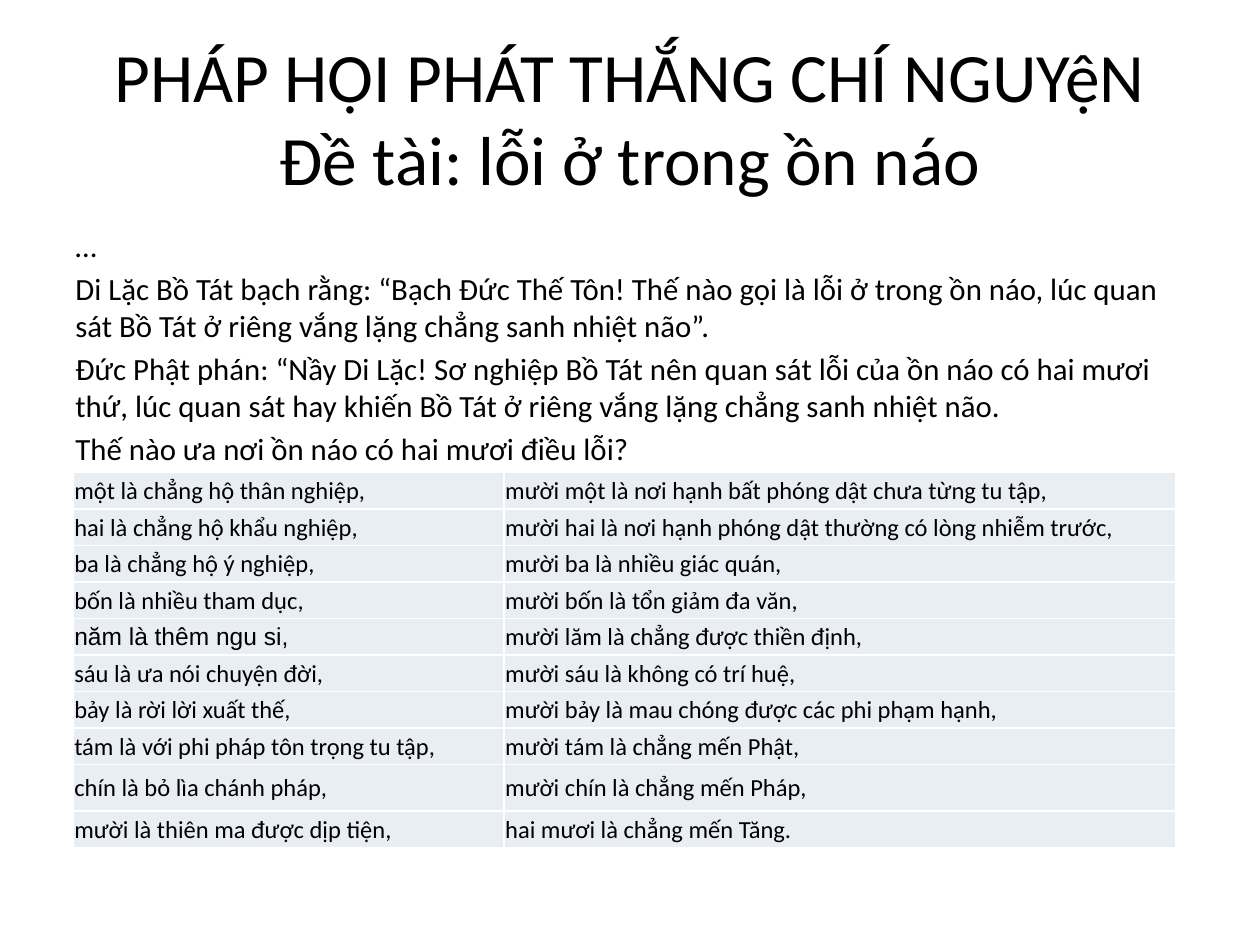
import pptx
import pptx.util
import pptx.dml.color
import pptx.enum.text
import pptx.oxml.ns
from lxml import etree

RGBColor = pptx.dml.color.RGBColor
ALIGN = pptx.enum.text.PP_ALIGN
ANCHOR = pptx.enum.text.MSO_ANCHOR
BLACK = RGBColor(0x00, 0x00, 0x00)
WHITE = RGBColor(0xFF, 0xFF, 0xFF)
PALE_BLUE = RGBColor(0xE9, 0xED, 0xF4)

TITLE = "PHÁP HỘI PHÁT THẮNG CHÍ NGUYệN\vĐề tài: lỗi ở trong ồn náo"
INTRO = [
    "…",
    "Di Lặc Bồ Tát bạch rằng: “Bạch Đức Thế Tôn! Thế nào gọi là lỗi ở trong ồn náo, "
    "lúc quan sát Bồ Tát ở riêng vắng lặng chẳng sanh nhiệt não”.",
    "Đức Phật phán: “Nầy Di Lặc! Sơ nghiệp Bồ Tát nên quan sát lỗi của ồn náo có hai mươi "
    "thứ, lúc quan sát hay khiến Bồ Tát ở riêng vắng lặng chẳng sanh nhiệt não.",
    "Thế nào ưa nơi ồn náo có hai mươi điều lỗi?",
]
FAULTS = [
    ("một là chẳng hộ thân nghiệp,", "mười một là nơi hạnh bất phóng dật chưa từng tu tập,"),
    ("hai là chẳng hộ khẩu nghiệp,", "mười hai là nơi hạnh phóng dật thường có lòng nhiễm trước,"),
    ("ba là chẳng hộ ý nghiệp,", "mười ba là nhiều giác quán,"),
    ("bốn là nhiều tham dục,", "mười bốn là tổn giảm đa văn,"),
    ("năm là thêm ngu si,", "mười lăm là chẳng được thiền định,"),
    ("sáu là ưa nói chuyện đời,", "mười sáu là không có trí huệ,"),
    ("bảy là rời lời xuất thế,", "mười bảy là mau chóng được các phi phạm hạnh,"),
    ("tám là với phi pháp tôn trọng tu tập,", "mười tám là chẳng mến Phật,"),
    ("chín là bỏ lìa chánh pháp,", "mười chín là chẳng mến Pháp,"),
    ("mười là thiên ma được dịp tiện,", "hai mươi là chẳng mến Tăng."),
]
ARIAL_CELL = (4, 0)
TALL_ROW = 8


def write(tf, text, size=14, font="Calibri", color=BLACK, align=ALIGN.LEFT, before=0):
    """Fill a text frame, one paragraph per line of text."""
    tf.word_wrap = True
    for i, line in enumerate(text.split("\n")):
        p = tf.add_paragraph() if i else tf.paragraphs[0]
        p.text = line
        p.alignment = align
        p.space_before = pptx.util.Pt(before)
        for r in p.runs:
            r.font.size = pptx.util.Pt(size)
            r.font.name = font
            r.font.color.rgb = color


class Deck:
    """Slide on a grid of 20 columns by 15 rows."""
    COLS, ROWS = 20, 15

    def __init__(self):
        self.prs = pptx.Presentation()
        self.prs.slide_width = pptx.util.Inches(10)
        self.prs.slide_height = pptx.util.Inches(7.5)
        self.s = self.prs.slides.add_slide(self.prs.slide_layouts[5])

    def x(self, cols):
        return round(self.prs.slide_width * cols / self.COLS)

    def y(self, rows):
        return round(self.prs.slide_height * rows / self.ROWS)

    def box(self, left, top, width, height):
        return self.x(left), self.y(top), self.x(width), self.y(height)

    def title(self, text, *place, size):
        sp = self.s.shapes.title
        sp.left, sp.top, sp.width, sp.height = self.box(*place)
        sp.text_frame.vertical_anchor = ANCHOR.MIDDLE
        write(sp.text_frame, text, size=size, align=ALIGN.CENTER)

    def text(self, text, *place, **style):
        sp = self.s.shapes.add_textbox(*self.box(*place))
        write(sp.text_frame, text, **style)

    def border(self, cell):
        tc_pr = cell._tc.get_or_add_tcPr()
        qn = pptx.oxml.ns.qn
        for side in ("a:lnL", "a:lnR", "a:lnT", "a:lnB"):
            ln = etree.SubElement(tc_pr, qn(side), w=str(pptx.util.Pt(1)))
            fill = etree.SubElement(ln, qn("a:solidFill"))
            etree.SubElement(fill, qn("a:srgbClr"), val=str(WHITE))

    def table(self, rows, left, top, widths, heights):
        place = self.box(left, top, sum(widths), sum(heights))
        table = self.s.shapes.add_table(len(rows), len(widths), *place).table
        table.first_row = table.horz_banding = False
        for column, width in zip(table.columns, widths):
            column.width = self.x(width)
        for i, (row, height) in enumerate(zip(rows, heights)):
            table.rows[i].height = self.y(height)
            for j, text in enumerate(row):
                cell = table.cell(i, j)
                self.border(cell)
                cell.fill.solid()
                cell.fill.fore_color.rgb = PALE_BLUE
                cell.margin_left = cell.margin_right = cell.margin_top = pptx.util.Inches(0.01)
                cell.margin_bottom = 0
                cell.vertical_anchor = ANCHOR.MIDDLE
                write(cell.text_frame, text,
                      font="Arial" if (i, j) == ARIAL_CELL else "Calibri")


def main():
    deck = Deck()

    # Heading
    deck.title(TITLE, 1, 0.6, 18, 2.5, size=39.6)

    # Opening dialogue
    deck.text("\n".join(INTRO), 1, 3.5, 18, 9.9, size=17.6, before=3.5)

    # The twenty faults
    heights = [0.74 if i == TALL_ROW else 0.58 for i in range(len(FAULTS))]
    deck.table(FAULTS, 1.16, 7.5, widths=(6.84, 10.66), heights=heights)

    deck.prs.save("out.pptx")


if __name__ == "__main__":
    main()
